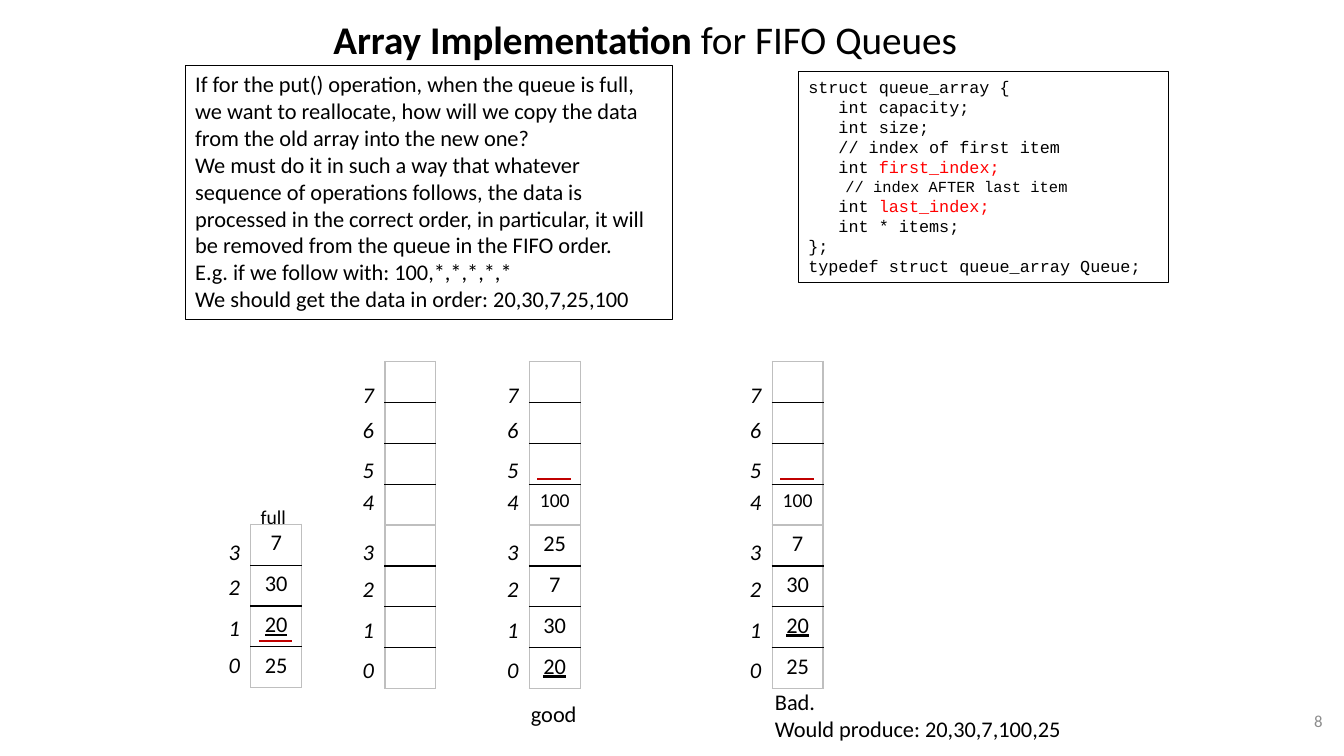
"""Slide on reallocating a full array-based FIFO queue."""
from dataclasses import dataclass

from lxml.etree import SubElement
from pptx import Presentation
from pptx.dml.color import RGBColor
from pptx.enum.shapes import MSO_CONNECTOR as Connector, MSO_SHAPE as Shape
from pptx.enum.text import MSO_ANCHOR as Anchor, MSO_AUTO_SIZE as AutoSize, PP_ALIGN as Align
from pptx.oxml.ns import qn
from pptx.slide import Slide
from pptx.text.text import TextFrame
from pptx.util import Cm, Pt

COLORS = {"ink": "000000", "code": "FF0000", "marker": "C00000", "grid": "BFBFBF", "number": "8C8C8C"}
BODY = {"name": "Calibri", "size": Pt(16)}
SMALL = BODY | {"size": Pt(14)}
INDEX = BODY | {"italic": True}
TITLE = BODY | {"size": Pt(28), "bold": False}
NUMBER = BODY | {"size": Pt(12)}
CODE = {"name": "Courier New", "size": Pt(12)}
CODE_SMALL = CODE | {"size": Pt(11)}
FRONT_ITEM = "20"
BLOCK_ROWS = 4
CELL_WIDTH, CELL_HEIGHT = 1.28, 1.03
INDEX_WIDTH, INDEX_HEIGHT = 0.81, 0.94
MARKER_INSET, MARKER_LENGTH = 0.2, 0.85
OLD_INDEX_TOPS = (16.28, 15.34, 14.33, 13.44)
NEW_INDEX_TOPS = (16.41, 15.39, 14.38, 13.44, 12.17, 11.38, 10.36, 9.47)


@dataclass(frozen=True)
class Span:
    """A stretch of text in one format."""
    text: str
    style: dict
    color: str = "ink"


@dataclass(frozen=True)
class Box:
    """A place on the slide, in centimetres."""
    left: float
    top: float
    width: float
    height: float

    def lengths(self) -> tuple:
        """Give the four lengths in slide units."""
        return Cm(self.left), Cm(self.top), Cm(self.width), Cm(self.height)


@dataclass(frozen=True)
class QueueArray:
    """An array with its items listed from the top cell down."""
    left: float
    top: float
    items: tuple
    index_tops: tuple
    marker_top: float | None = None


@dataclass(frozen=True)
class Caption:
    """Unwrapped text beside an array."""
    box: Box
    lines: tuple
    style: dict


QUEUE_ARRAYS = (
    QueueArray(6.32, 13.21, ("7", "30", "20", "25"), OLD_INDEX_TOPS, 16.15),
    QueueArray(9.7, 9.11, ("",) * 8, NEW_INDEX_TOPS),
    QueueArray(13.34, 9.11, ("", "", "", "100", "25", "7", "30", "20"), NEW_INDEX_TOPS, 12.07),
    QueueArray(19.46, 9.11, ("", "", "", "100", "7", "30", "20", "25"), NEW_INDEX_TOPS, 12.07),
)
CAPTIONS = (
    Caption(Box(6.32, 12.6, 1.17, 0.86), ("full",), SMALL),
    Caption(Box(13.13, 17.53, 1.68, 0.94), ("good",), BODY),
    Caption(Box(19.28, 17.22, 7.82, 1.63), ("Bad.", "Would produce: 20,30,7,100,25"), BODY),
)
QUESTION = (
    "If for the put() operation, when the queue is full, we want to reallocate, "
    "how will we copy the data from the old array into the new one?",
    "We must do it in such a way that whatever sequence of operations follows, the data is processed "
    "in the correct order, in particular, it will be removed from the queue in the FIFO order.",
    "E.g. if we follow with: 100,*,*,*,*,*",
    "We should get the data in order: 20,30,7,25,100",
)
STRUCT = (
    (Span("struct queue_array {", CODE),),
    (Span("   int capacity;", CODE),),
    (Span("   int size;", CODE),),
    (Span("   // index of first item", CODE),),
    (Span("   int ", CODE), Span("first_index;", CODE, "code")),
    (Span("    // index AFTER last item", CODE_SMALL),),
    (Span("   int ", CODE), Span("last_index;", CODE, "code")),
    (Span("   int * items;", CODE),),
    (Span("};", CODE),),
    (Span("typedef struct queue_array Queue;", CODE),),
)


def rgb(name: str) -> RGBColor:
    """Look up a colour."""
    return RGBColor.from_string(COLORS[name])


def plain(lines: tuple, style: dict) -> tuple:
    """Turn lines into paragraphs of one span each."""
    return tuple((Span(line, style),) for line in lines)


def write(frame: TextFrame, paragraphs: tuple, align: Align = Align.LEFT) -> None:
    """Fill a text frame with formatted paragraphs."""
    for number, spans in enumerate(paragraphs):
        paragraph = frame.add_paragraph() if number else frame.paragraphs[0]
        paragraph.alignment = align
        for span in spans:
            run = paragraph.add_run()
            run.text = span.text
            for attribute, value in span.style.items():
                setattr(run.font, attribute, value)
            run.font.color.rgb = rgb(span.color)


def add_label(slide: Slide, box: Box, paragraphs: tuple) -> None:
    """Add unwrapped text."""
    frame = slide.shapes.add_textbox(*box.lengths()).text_frame
    frame.word_wrap = False
    frame.auto_size = AutoSize.SHAPE_TO_FIT_TEXT
    write(frame, paragraphs)


def add_panel(slide: Slide, box: Box, paragraphs: tuple) -> None:
    """Add an outlined panel of text."""
    panel = slide.shapes.add_shape(Shape.RECTANGLE, *box.lengths())
    panel.shadow.inherit = False
    panel.fill.background()
    panel.line.color.rgb = rgb("ink")
    panel.line.width = Pt(0.75)
    frame = panel.text_frame
    frame.word_wrap = True
    frame.vertical_anchor = Anchor.TOP
    frame.auto_size = AutoSize.SHAPE_TO_FIT_TEXT
    write(frame, paragraphs)


def add_block(slide: Slide, left: float, top: float, items: tuple) -> None:
    """Add a one-column table of queue items."""
    box = Box(left, top, CELL_WIDTH, CELL_HEIGHT * len(items))
    table = slide.shapes.add_table(len(items), 1, *box.lengths()).table
    table.first_row = table.horz_banding = False
    for row, item in enumerate(items):
        cell = table.cell(row, 0)
        edges = {"L": "grid", "R": "grid", "T": "ink" if row else "grid",
                 "B": "ink" if row < len(items) - 1 else "grid"}
        properties = cell._tc.get_or_add_tcPr()
        for side, color in edges.items():
            border = SubElement(properties, qn(f"a:ln{side}"), w=str(Pt(1)))
            SubElement(SubElement(border, qn("a:solidFill")), qn("a:srgbClr"), val=COLORS[color])
        cell.fill.background()
        if item:
            style = (SMALL if len(item) > 2 else BODY) | {"underline": item == FRONT_ITEM}
            write(cell.text_frame, plain((item,), style), Align.CENTER)


def add_queue_array(slide: Slide, array: QueueArray) -> None:
    """Add an array's blocks, indices and end marker."""
    for start in range(0, len(array.items), BLOCK_ROWS):
        add_block(slide, array.left, array.top + start * CELL_HEIGHT, array.items[start:start + BLOCK_ROWS])
    for index, top in enumerate(array.index_tops):
        box = Box(array.left - INDEX_WIDTH, top, INDEX_WIDTH, INDEX_HEIGHT)
        add_label(slide, box, plain((str(index),), INDEX))
    if array.marker_top is not None:
        start, height = array.left + MARKER_INSET, Cm(array.marker_top)
        marker = slide.shapes.add_connector(
            Connector.STRAIGHT, Cm(start), height, Cm(start + MARKER_LENGTH), height)
        marker.line.color.rgb = rgb("marker")
        marker.line.width = Pt(1.5)
        SubElement(marker._element.spPr, qn("a:effectLst"))


def main() -> None:
    """Build and save the slide."""
    deck = Presentation()
    deck.slide_width, deck.slide_height = Cm(33.87), Cm(19.05)
    slide = deck.slides.add_slide(deck.slide_layouts[5])
    title = slide.shapes.title
    title.left, title.top, title.width, title.height = Box(7.42, 0, 17.68, 1.96).lengths()
    title.text_frame.vertical_anchor = Anchor.MIDDLE
    title.text_frame.auto_size = AutoSize.NONE
    heading = (Span("Array Implementation", TITLE | {"bold": True}), Span(" for FIFO Queues", TITLE))
    write(title.text_frame, (heading,), Align.CENTER)
    add_panel(slide, Box(20.12, 1.8, 9.32, 5.33), STRUCT)
    add_panel(slide, Box(4.67, 1.65, 12.29, 6.4), plain(QUESTION, BODY))
    for array in QUEUE_ARRAYS:
        add_queue_array(slide, array)
    for caption in CAPTIONS:
        add_label(slide, caption.box, plain(caption.lines, caption.style))
    page = slide.shapes.add_textbox(*Box(25.68, 17.65, 7.9, 1.02).lengths()).text_frame
    page.word_wrap = True
    page.vertical_anchor = Anchor.MIDDLE
    write(page, ((Span("8", NUMBER, "number"),),), Align.RIGHT)
    deck.save("out.pptx")


if __name__ == "__main__":
    main()
